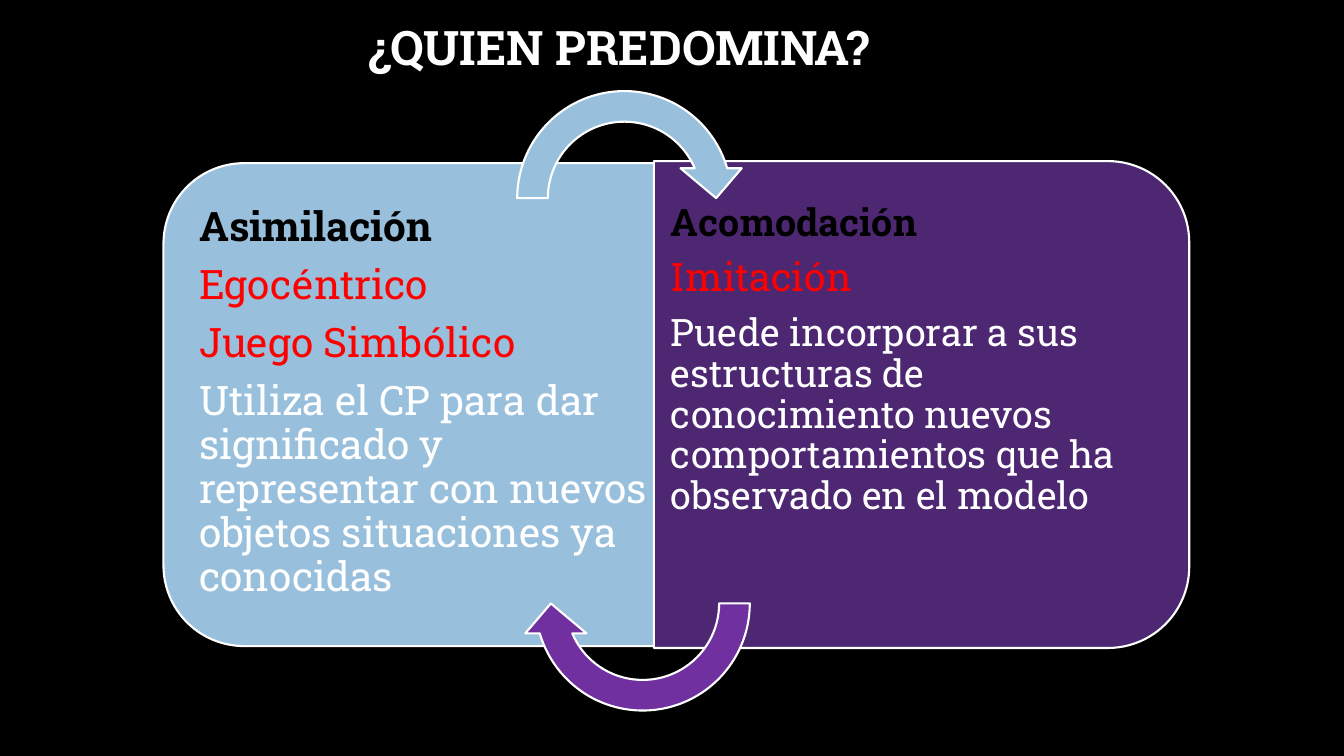
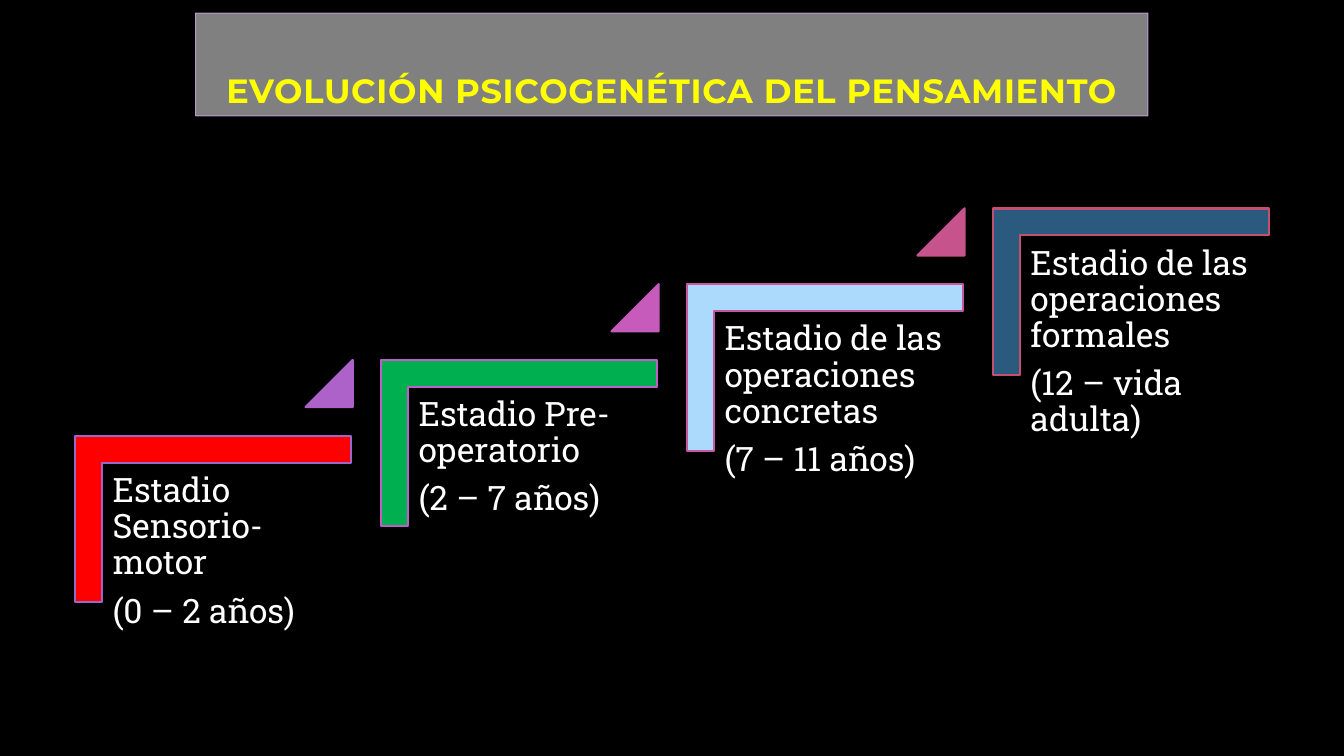
import lxml.etree
import pptx
import pptx.dml.color
import pptx.enum.shapes
import pptx.enum.text
import pptx.oxml.ns
import pptx.util

Cm = pptx.util.Cm
Pt = pptx.util.Pt
SHAPES = pptx.enum.shapes.MSO_SHAPE
ALIGN = pptx.enum.text.PP_ALIGN
ANCHOR = pptx.enum.text.MSO_ANCHOR

BLACK, WHITE, RED, YELLOW = "000000", "FFFFFF", "FF0000", "FFFF00"
SKY, PLUM, VIOLET, GREY, LILAC = "98C0DD", "4D2771", "7030A0", "808080", "C2A3DF"
BODY_FONT, BANNER_FONT = "Roboto Slab", "Montserrat"
LINE_SPACING, PARAGRAPH_GAP = 0.9, 0.35

PANELS = [
    {"box": (4.6, 3.63, 12.17, 13.13), "turn": 270, "fill": SKY,
     "text_box": (4.72, 4.7, 12.55, 11), "insets": (0.3, 0.51, 0.46, 0.51),
     "lines": [("Asimilación", 29, BLACK, True),
               ("Egocéntrico", 29, RED, False),
               ("Juego Simbólico", 29, RED, False),
               ("Utiliza el CP para dar significado y representar con nuevos "
                "objetos situaciones ya conocidas", 29, WHITE, False)]},
    {"box": (17.09, 3.45, 12.27, 13.49), "turn": 90, "fill": PLUM,
     "text_box": (16.48, 4.65, 12.9, 11.07), "insets": (0.43, 0.48, 0.28, 0.48),
     "lines": [("Acomodación", 27, BLACK, True),
               ("Imitación", 28, RED, False),
               ("Puede incorporar a sus estructuras de conocimiento nuevos "
                "comportamientos que ha observado en el modelo", 27, WHITE, False)]},
]
CYCLE_ARROWS = [(12.65, 1.91, 0, SKY), (13.11, 12.12, 180, VIOLET)]
ARROW_SIZE = 6.17
ARROW_BEND = (0.125, 11.423, 204.577, 108, 0.125)

STAGES = [
    ("Estadio Sensorio-motor", "(0 – 2 años)", RED, "9A66CA", "AC62C9"),
    ("Estadio Pre-operatorio", "(2 – 7 años)", "00B050", "C05EC8", "C75BBB"),
    ("Estadio de las operaciones concretas", "(7 – 11 años)",
     "ABDAFC", "C757A3", "C6538B"),
    ("Estadio de las operaciones formales", "(12 – vida adulta)",
     "2A5B7F", "C54F71", None),
]
STAGE_RUN, STAGE_RISE = 7.71, 1.91


def color(hex_value):
    """Turn a hex string into a colour."""
    return pptx.dml.color.RGBColor.from_string(hex_value)


def apply_format(target, values):
    """Set each named attribute of the target."""
    for name, value in values.items():
        setattr(target, name, value)


def add_slide(deck):
    """Add a blank slide with the shared black background."""
    slide = deck.slides.add_slide(deck.slide_layouts[6])
    slide.background.fill.solid()
    slide.background.fill.fore_color.rgb = color(BLACK)
    return slide


def add_figure(slide, kind, box, fill, outline, bend=(), turn=0, weight=1.5):
    """Add a filled, outlined preset shape without shadow."""
    figure = slide.shapes.add_shape(kind, *map(Cm, box))
    figure.shadow.inherit = False
    figure.rotation = turn
    for index, value in enumerate(bend):
        figure.adjustments[index] = value
    figure.fill.solid()
    figure.fill.fore_color.rgb = color(fill)
    figure.line.color.rgb = color(outline)
    figure.line.width = Pt(weight)
    return figure


def write_lines(frame, lines, font=BODY_FONT, align=ALIGN.LEFT,
                anchor=ANCHOR.TOP, spacing=LINE_SPACING,
                insets=(0.25, 0.13, 0.25, 0.13)):
    """Write (text, size, colour, bold) lines as paragraphs of a frame."""
    sides = ("margin_left", "margin_top", "margin_right", "margin_bottom")
    apply_format(frame, {"word_wrap": True, "vertical_anchor": anchor,
                         **dict(zip(sides, map(Cm, insets)))})
    for index, (text, size, ink, bold) in enumerate(lines):
        paragraph = frame.add_paragraph() if index else frame.paragraphs[0]
        apply_format(paragraph, {"alignment": align, "line_spacing": spacing,
                                 "space_after": Pt(size * PARAGRAPH_GAP)
                                 if len(lines) > 1 else Pt(0)})
        run = paragraph.add_run()
        run.text = text
        apply_format(run.font, {"name": font, "size": Pt(size), "bold": bold})
        run.font.color.rgb = color(ink)


def add_text(slide, box, lines, **layout):
    """Add a text box holding the given lines."""
    write_lines(slide.shapes.add_textbox(*map(Cm, box)).text_frame, lines, **layout)


def add_banner(slide, text):
    """Add the grey heading band with spaced letters and a translucent edge."""
    banner = add_figure(slide, SHAPES.RECTANGLE, (4.93, 0.33, 24, 2.59),
                        GREY, LILAC, weight=0.75)
    write_lines(banner.text_frame, [(text, 24, YELLOW, True)], font=BANNER_FONT,
                align=ALIGN.CENTER, anchor=ANCHOR.BOTTOM, spacing=1.0)
    banner.text_frame.paragraphs[0].runs[0].font._element.set("spc", "50")
    qn = pptx.oxml.ns.qn
    edge = banner.line._ln.find(".//" + qn("a:srgbClr"))
    lxml.etree.SubElement(edge, qn("a:alpha")).set("val", "91000")


def add_stage(slide, step, name, ages, fill, outline, marker):
    """Add one stair step with its text and the marker to the next step."""
    across, up = step * STAGE_RUN, step * STAGE_RISE
    add_figure(slide, SHAPES.CORNER, (3.28 + across, 9.6 - up, 4.19, 6.96),
               fill, outline, bend=(0.161, 0.161), turn=90)
    add_text(slide, (2.59 + across, 11.68 - up, 6.3, 5.51),
             [(line, 24, WHITE, False) for line in (name, ages)],
             insets=(0.25,) * 4)
    if marker:
        add_figure(slide, SHAPES.ISOSCELES_TRIANGLE,
                   (7.7 + across, 9.07 - up, 1.19, 1.19), marker, marker, bend=(1,))


def build_balance(deck):
    """Build the slide that compares assimilation and accommodation."""
    slide = add_slide(deck)
    for panel in PANELS:
        add_figure(slide, SHAPES.ROUND_2_SAME_RECTANGLE, panel["box"],
                   panel["fill"], WHITE, bend=(0.167, 0), turn=panel["turn"])
        add_text(slide, panel["text_box"], panel["lines"], insets=panel["insets"])
    for left, top, turn, fill in CYCLE_ARROWS:
        add_figure(slide, SHAPES.CIRCULAR_ARROW, (left, top, ARROW_SIZE, ARROW_SIZE),
                   fill, WHITE, bend=ARROW_BEND, turn=turn)
    add_text(slide, (1.22, 0, 28.75, 2.52), [("¿QUIEN PREDOMINA?", 34, WHITE, True)],
             align=ALIGN.CENTER, anchor=ANCHOR.MIDDLE)


def build_stages(deck):
    """Build the slide with the rising stages of thought."""
    slide = add_slide(deck)
    add_banner(slide, "EVOLUCIÓN PSICOGENÉTICA DEL PENSAMIENTO")
    for step, stage in enumerate(STAGES):
        add_stage(slide, step, *stage)


def main():
    """Build and save the presentation."""
    deck = pptx.Presentation()
    apply_format(deck, {"slide_width": Cm(33.87), "slide_height": Cm(19.05)})
    build_balance(deck)
    build_stages(deck)
    deck.save("out.pptx")


if __name__ == "__main__":
    main()
